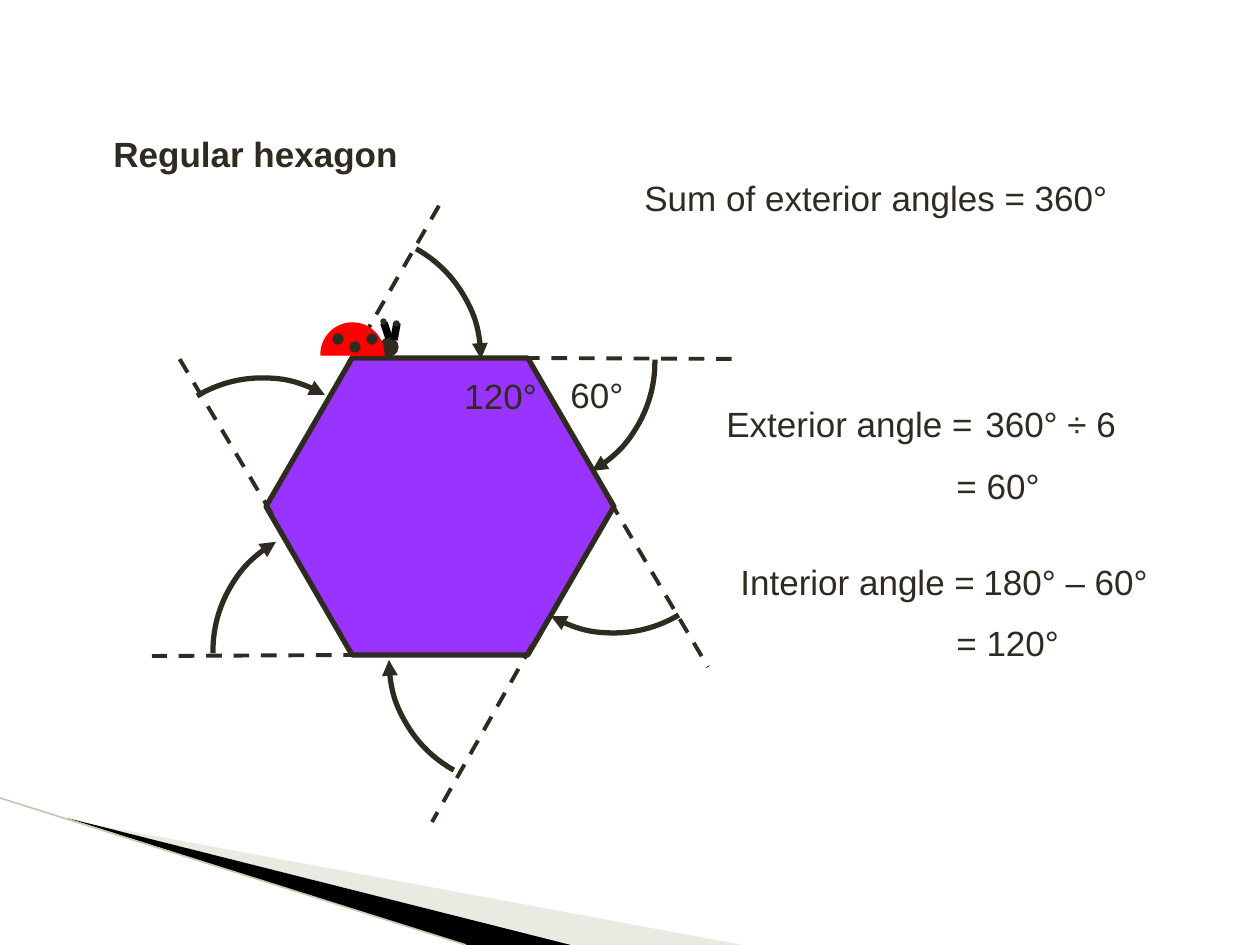
from dataclasses import dataclass
from lxml.etree import SubElement
from pptx import Presentation
from pptx.dml.color import RGBColor
from pptx.enum.dml import MSO_LINE_DASH_STYLE as Dash
from pptx.enum.shapes import MSO_CONNECTOR_TYPE as Connector, MSO_SHAPE as Shape
from pptx.enum.text import MSO_AUTO_SIZE as AutoSize
from pptx.oxml.ns import qn
from pptx.util import Emu, Pt


@dataclass(frozen=True)
class Theme:
    font: str = "Arial"
    size: int = 20
    ink: str = "2F2B20"
    purple: str = "9933FF"
    red: str = "FF0000"
    black: str = "000000"
    sand: str = "CECCB7"
    edge: str = "C9C7B0"
    outline: float = 3
    dash: float = 2.25
    fine: float = 0.75
    antenna: float = 4.33
    edge_width: float = 0.95


THEME = Theme()
SCALE = 914400 / 126  # EMU per px
SLIDE = (1260, 945)

# Content: text, left, top, width, bold
LABELS = [
    ("60°", 558, 367, 79, False),
    ("120°", 452, 368, 98, False),
    ("Sum of exterior angles = 360°", 632, 170, 498, False),
    ("Exterior angle =", 714, 396, 276, False),
    ("360° ÷ 6", 973, 396, 166, False),
    ("= 60°", 944, 458, 110, False),
    ("Interior angle =", 728, 554, 262, False),
    ("180° – 60°", 971, 554, 198, False),
    ("= 120°", 944, 615, 129, False),
    ("Regular hexagon", 101, 126, 316, True),
]

# Corner decoration: points, colour, opacity in percent
WEDGES = [
    ([(69, 820), (743, 945), (574, 945)], THEME.sand, 40),
    ([(67, 818), (571, 945), (465, 945)], THEME.black, 100),
]
CORNER_EDGE = ((0, 798), (466, 945))

# Hexagon, its extended sides, and the turn at each vertex, clockwise
HEXAGON = (266, 358, 348, 297)
EXTENSIONS = [
    ((524, 358), (741, 359)),
    ((610, 501), (708, 667)),
    ((532, 645), (432, 822)),
    ((359, 655), (152, 656)),
    ((272, 514), (179, 358)),
    ((349, 362), (440, 204)),
]
TURN_CENTRES = [(355, 359), (529, 362), (614, 507), (515, 660), (339, 651), (262, 504)]
TURN_RADIUS, TURN_STEP, TURN_START, TURN_SWEEP = 126, 60, -61, 61

# Ladybird
HEAD = (380, 338, 18, 18)
BODY = (321, 323, 63, 63)
BODY_ANGLES = (178.9, 1.4)
SPOTS = [(333, 334), (350, 342), (367, 334)]
ANTENNAE = [((389, 338), (384, 323)), ((394, 340), (397, 323))]
TIPS = [(381, 319), (394, 321)]
SPOT_SIZE, TIP_SIZE = 10, 5


def px(*values):
    return [Emu(round(value * SCALE)) for value in values]


def rgb(colour):
    return RGBColor.from_string(colour)


def set_line(item, colour, width, dash=None, arrow=False):
    item.line.color.rgb = rgb(colour)
    for name, value in {"width": Pt(width), "dash_style": dash}.items():
        setattr(item.line, name, value)
    if arrow:
        SubElement(item.line._get_or_add_ln(), qn("a:tailEnd"), type="triangle")


def set_fill(shape, colour):
    shape.shadow.inherit = False
    shape.fill.solid()
    shape.fill.fore_color.rgb = rgb(colour)


def add_line(shapes, start, end, colour, width, dash=None):
    line = shapes.add_connector(Connector.STRAIGHT, *px(*start, *end))
    set_line(line, colour, width, dash)
    SubElement(line._element.spPr, qn("a:effectLst"))


def add_solid(shapes, kind, box, colour, edge, width):
    shape = shapes.add_shape(kind, *px(*box))
    set_fill(shape, colour)
    set_line(shape, edge, width)
    return shape


def set_angles(shape, *degrees):
    # Angles are stored in 60000ths of a degree, adjustments in 100000ths
    for index, degree in enumerate(degrees):
        shape.adjustments[index] = degree % 360 * 0.6


def add_wedge(shapes, points, colour, opacity):
    builder = shapes.build_freeform(*points[0], scale=SCALE)
    builder.add_line_segments(points[1:], close=True)
    wedge = builder.convert_to_shape()
    set_fill(wedge, colour)
    wedge.line.fill.background()
    if opacity < 100:
        tint = wedge._element.spPr.find(".//" + qn("a:srgbClr"))
        SubElement(tint, qn("a:alpha"), val=str(opacity * 1000))


def add_turn(shapes, centre, start):
    x, y = centre
    size = 2 * TURN_RADIUS
    arc = shapes.add_shape(Shape.ARC, *px(x - TURN_RADIUS, y - TURN_RADIUS, size, size))
    arc.shadow.inherit = False
    arc.fill.background()
    set_angles(arc, start, start + TURN_SWEEP)
    set_line(arc, THEME.ink, THEME.outline, arrow=True)


def add_label(shapes, text, left, top, width, bold):
    frame = shapes.add_textbox(*px(left, top, width, 55)).text_frame
    for name, value in {"word_wrap": False, "auto_size": AutoSize.SHAPE_TO_FIT_TEXT}.items():
        setattr(frame, name, value)
    run = frame.paragraphs[0].add_run()
    run.text = text
    for name, value in {"name": THEME.font, "size": Pt(THEME.size), "bold": bold}.items():
        setattr(run.font, name, value)
    run.font.color.rgb = rgb(THEME.ink)


def add_ladybird(shapes):
    def dot(box):
        add_solid(shapes, Shape.OVAL, box, THEME.ink, THEME.ink, THEME.fine)

    dot(HEAD)
    body = add_solid(shapes, Shape.CHORD, BODY, THEME.red, THEME.red, THEME.fine)
    set_angles(body, *BODY_ANGLES)
    for spot in SPOTS:
        dot((*spot, SPOT_SIZE, SPOT_SIZE))
    for start, end in ANTENNAE:
        add_line(shapes, start, end, THEME.black, THEME.antenna)
    for tip in TIPS:
        dot((*tip, TIP_SIZE, TIP_SIZE))


def main():
    presentation = Presentation()
    presentation.slide_width, presentation.slide_height = px(*SLIDE)
    shapes = presentation.slides.add_slide(presentation.slide_layouts[6]).shapes

    # Corner decoration
    for wedge in WEDGES:
        add_wedge(shapes, *wedge)
    add_line(shapes, *CORNER_EDGE, THEME.edge, THEME.edge_width)

    # Hexagon with its exterior angles
    hexagon = add_solid(shapes, Shape.HEXAGON, HEXAGON, THEME.purple, THEME.ink, THEME.outline)
    hexagon.adjustments[0] = 0.29
    for start, end in EXTENSIONS:
        add_line(shapes, start, end, THEME.ink, THEME.dash, Dash.DASH)
    for index, centre in enumerate(TURN_CENTRES):
        add_turn(shapes, centre, TURN_START + index * TURN_STEP)

    # Labels and ladybird
    for label in LABELS:
        add_label(shapes, *label)
    add_ladybird(shapes.add_group_shape().shapes)

    presentation.save("out.pptx")


if __name__ == "__main__":
    main()
